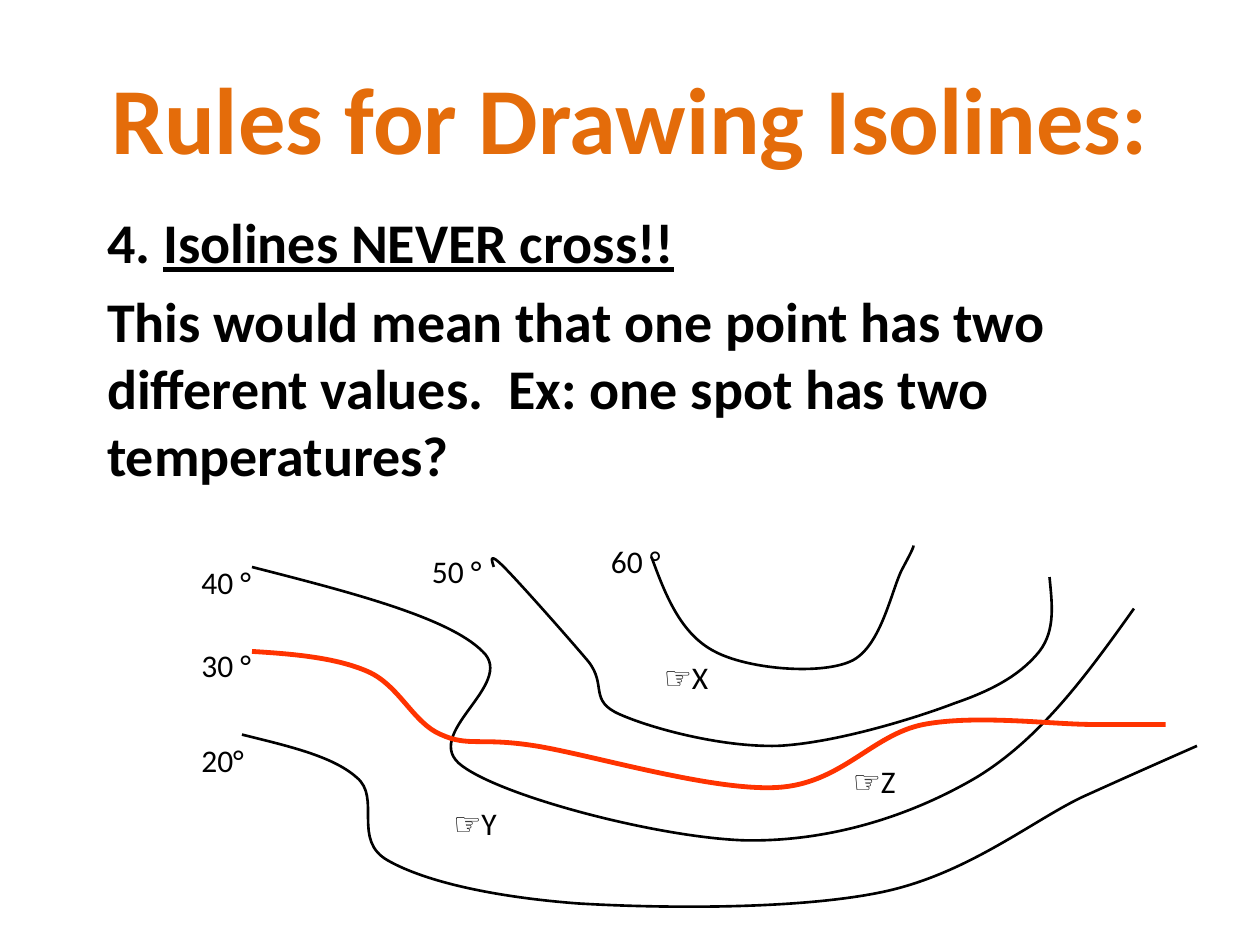
from lxml.etree import SubElement
from pptx import Presentation
from pptx.dml.color import RGBColor
from pptx.enum.text import MSO_ANCHOR, PP_ALIGN
from pptx.oxml.ns import qn
from pptx.util import Inches, Pt

THEME = {
    "font": "Calibri",
    "title": {"size": 54, "color": "E46C0A", "bold": True},
    "body": {"size": 32, "color": "000000", "bold": True},
    "label": {"size": 18, "color": "000000", "bold": False},
    "isoline": {"color": "000000", "width": 1.5},
    "crossing": {"color": "FF3300", "width": 2.75},
}

TITLE = "Rules for Drawing Isolines:"
RULE = [
    [("4. ", False), ("Isolines NEVER cross!!", True)],
    [("This would mean that one point has two different values.  "
      "Ex: one spot has two temperatures?", False)],
]

# start point, then two control points and an end point per curve
ISOLINES = [
    ("isoline", [(2, 4.5),
                 (2.78, 4.7), (3.56, 4.9), (3.83, 5.17),
                 (4.11, 5.43), (3.32, 5.83), (3.67, 6.08),
                 (4.01, 6.33), (5.24, 6.65), (5.92, 6.67),
                 (6.6, 6.68), (7.24, 6.47), (7.75, 6.17),
                 (8.26, 5.86), (8.63, 5.35), (9, 4.83)]),
    ("crossing", [(2, 5.17),
                  (2.33, 5.19), (2.67, 5.22), (2.92, 5.33),
                  (3.17, 5.44), (3.28, 5.74), (3.5, 5.83),
                  (3.72, 5.93), (3.81, 5.85), (4.25, 5.92),
                  (4.69, 5.99), (5.65, 6.28), (6.17, 6.25),
                  (6.68, 6.22), (6.92, 5.83), (7.33, 5.75),
                  (7.75, 5.67), (8.35, 5.75), (8.67, 5.75),
                  (8.99, 5.75), (9.12, 5.75), (9.25, 5.75)]),
    ("isoline", [(3.92, 4.5),
                 (3.9, 4.44), (3.88, 4.38), (4, 4.5),
                 (4.12, 4.62), (4.51, 5.06), (4.67, 5.25),
                 (4.82, 5.44), (4.67, 5.56), (4.92, 5.67),
                 (5.17, 5.78), (5.72, 5.93), (6.17, 5.92),
                 (6.61, 5.9), (7.24, 5.71), (7.58, 5.58),
                 (7.93, 5.46), (8.12, 5.33), (8.25, 5.17),
                 (8.38, 5), (8.35, 4.79), (8.33, 4.58)]),
    ("isoline", [(5.17, 4.42),
                 (5.28, 4.72), (5.4, 5.03), (5.67, 5.17),
                 (5.93, 5.31), (6.5, 5.36), (6.75, 5.25),
                 (7, 5.14), (7.08, 4.65), (7.17, 4.5),
                 (7.25, 4.35), (7.25, 4.34), (7.25, 4.33)]),
    ("isoline", [(1.92, 5.83),
                 (2.28, 5.92), (2.64, 6), (2.83, 6.17),
                 (3.03, 6.33), (2.79, 6.67), (3.08, 6.83),
                 (3.38, 7), (3.93, 7.12), (4.58, 7.17),
                 (5.24, 7.21), (6.33, 7.22), (7, 7.08),
                 (7.67, 6.94), (8.17, 6.53), (8.58, 6.33),
                 (9, 6.14), (9.25, 6.03), (9.5, 5.92)]),
]

LABELS = [
    ("20°", 1.5, 5.83), ("30 °", 1.5, 5.08), ("40 °", 1.5, 4.42),
    ("50 °", 3.33, 4.33), ("60 °", 4.75, 4.25),
    ("☞X", 5.17, 5.17), ("☞Y", 3.5, 6.33), ("☞Z", 6.67, 6),
]
LABEL_SIZE = (1, 0.5)


def place(part, left, top, width, height):
    part.left, part.top = Inches(left), Inches(top)
    part.width, part.height = Inches(width), Inches(height)


def add_run(paragraph, text, role, underline=False):
    style = THEME[role]
    run = paragraph.add_run()
    run.text = text
    run.font.name = THEME["font"]
    run.font.size = Pt(style["size"])
    run.font.bold = style["bold"]
    run.font.color.rgb = RGBColor.from_string(style["color"])
    if underline:
        run.font.underline = True


def add_curve(slide, role, points):
    start, *rest = [(Inches(x), Inches(y)) for x, y in points]
    builder = slide.shapes.build_freeform(*start)
    builder.add_line_segments(rest, close=False)
    curve = builder.convert_to_shape()
    outline = next(curve.element.iter(qn("a:path")))
    segments = outline.findall(qn("a:lnTo"))
    for first in range(0, len(segments), 3):
        bezier = SubElement(outline, qn("a:cubicBezTo"))
        for segment in segments[first:first + 3]:
            bezier.append(segment[0])
            outline.remove(segment)
    curve.shadow.inherit = False
    curve.fill.background()
    curve.line.color.rgb = RGBColor.from_string(THEME[role]["color"])
    curve.line.width = Pt(THEME[role]["width"])


def main():
    prs = Presentation()
    prs.slide_width, prs.slide_height = Inches(10), Inches(7.5)
    slide = prs.slides.add_slide(prs.slide_layouts[1])

    title = slide.shapes.title
    place(title, 0.5, 0.3, 9, 1.25)
    title.text_frame.vertical_anchor = MSO_ANCHOR.MIDDLE
    heading = title.text_frame.paragraphs[0]
    heading.alignment = PP_ALIGN.CENTER
    add_run(heading, TITLE, "title")

    body = slide.placeholders[1]
    place(body, 0.75, 1.6, 8.5, 2.4)
    for index, runs in enumerate(RULE):
        frame = body.text_frame
        paragraph = frame.add_paragraph() if index else frame.paragraphs[0]
        properties = paragraph._p.get_or_add_pPr()
        properties.set("marL", "0")
        properties.set("indent", "0")
        SubElement(properties, qn("a:buNone"))
        for text, underline in runs:
            add_run(paragraph, text, "body", underline)

    for role, points in ISOLINES:
        add_curve(slide, role, points)

    for text, left, top in LABELS:
        label = slide.shapes.add_textbox(
            *(Inches(value) for value in (left, top, *LABEL_SIZE)))
        label.text_frame.word_wrap = True
        add_run(label.text_frame.paragraphs[0], text, "label")

    prs.save("out.pptx")


if __name__ == "__main__":
    main()
